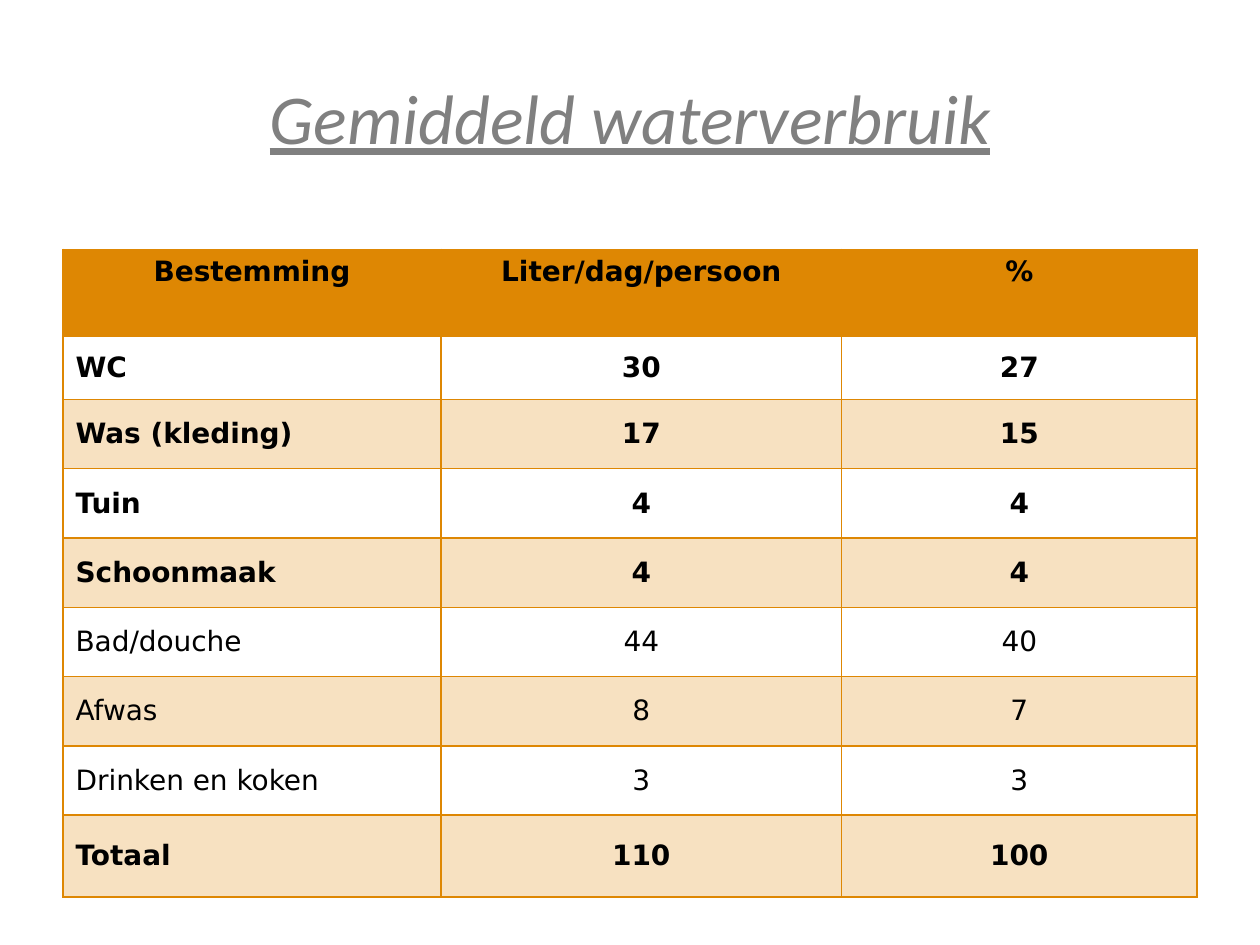
from dataclasses import dataclass

from lxml import etree
from pptx import Presentation
from pptx import util as u
from pptx.dml.color import RGBColor
from pptx.enum import text
from pptx.oxml import ns

TITLE = "Gemiddeld waterverbruik"
HEADER = ("Bestemming", "Liter/dag/persoon", "%")
# Label, litres per person per day, percentage, bold
USES = [
    ("WC", 30, 27, True),
    ("Was (kleding)", 17, 15, True),
    ("Tuin", 4, 4, True),
    ("Schoonmaak", 4, 4, True),
    ("Bad/douche", 44, 40, False),
    ("Afwas", 8, 7, False),
    ("Drinken en koken", 3, 3, False),
    ("Totaal", 110, 100, True),
]

SLIDE_WIDTH, SLIDE_HEIGHT = 10, 7.5
MARGIN = 0.05 * SLIDE_WIDTH
CONTENT_WIDTH = SLIDE_WIDTH - 2 * MARGIN
TITLE_TOP, TITLE_HEIGHT = 0.04 * SLIDE_HEIGHT, 1.25
TABLE_TOP = 1.98
COLUMN_WIDTHS = (3, 3.18, 2.82)
HEADER_HEIGHT, FIRST_HEIGHT, ROW_HEIGHT, TOTAL_HEIGHT = 0.69, 0.5, 0.55, 0.65


@dataclass(frozen=True)
class Theme:
    title_font: str = "Calibri"
    table_font: str = "DejaVu Sans"
    title_size: int = 40
    table_size: int = 16
    title: str = "808080"
    ink: str = "000000"
    accent: str = "DE8703"
    band: str = "F7E1C1"
    border_width: int = 1


THEME = Theme()


def style_font(font, name, size, color):
    font.name = name
    font.size = u.Pt(size)
    font.color.rgb = RGBColor.from_string(color)


def add_borders(cell):
    properties = cell._tc.get_or_add_tcPr()
    for side in ("lnL", "lnR", "lnT", "lnB"):
        line = etree.SubElement(properties, ns.qn(f"a:{side}"), w=str(u.Pt(THEME.border_width)))
        fill = etree.SubElement(line, ns.qn("a:solidFill"))
        etree.SubElement(fill, ns.qn("a:srgbClr"), val=THEME.accent)


def fill_cell(cell, value, bold, centred, anchor, color):
    """Write and format one cell; borders must come before the fill in the XML."""
    add_borders(cell)
    if color:
        cell.fill.solid()
        cell.fill.fore_color.rgb = RGBColor.from_string(color)
    else:
        cell.fill.background()
    cell.vertical_anchor = anchor
    cell.text_frame.text = str(value)
    paragraph = cell.text_frame.paragraphs[0]
    paragraph.alignment = text.PP_ALIGN.CENTER if centred else text.PP_ALIGN.LEFT
    font = paragraph.runs[0].font
    style_font(font, THEME.table_font, THEME.table_size, THEME.ink)
    font.bold = bold


def add_title(slide):
    title = slide.shapes.title
    title.left, title.top = u.Inches(MARGIN), u.Inches(TITLE_TOP)
    title.width, title.height = u.Inches(CONTENT_WIDTH), u.Inches(TITLE_HEIGHT)
    title.text_frame.text = TITLE
    title.text_frame.vertical_anchor = text.MSO_ANCHOR.MIDDLE
    paragraph = title.text_frame.paragraphs[0]
    paragraph.alignment = text.PP_ALIGN.CENTER
    font = paragraph.runs[0].font
    style_font(font, THEME.title_font, THEME.title_size, THEME.title)
    font.italic = font.underline = True


def add_usage_table(slide):
    heights = [HEADER_HEIGHT, FIRST_HEIGHT, *[ROW_HEIGHT] * (len(USES) - 2), TOTAL_HEIGHT]
    table = slide.shapes.add_table(
        len(heights), len(HEADER), u.Inches(MARGIN), u.Inches(TABLE_TOP),
        u.Inches(CONTENT_WIDTH), u.Inches(sum(heights))).table
    table.first_row = True
    table.horz_banding = False
    for column, width in zip(table.columns, COLUMN_WIDTHS):
        column.width = u.Inches(width)
    for row, height in zip(table.rows, heights):
        row.height = u.Inches(height)

    for column, label in enumerate(HEADER):
        fill_cell(table.cell(0, column), label, True, True, text.MSO_ANCHOR.TOP, THEME.accent)
    for row, (*values, bold) in enumerate(USES, start=1):
        color = THEME.band if row % 2 == 0 else None
        for column, value in enumerate(values):
            fill_cell(table.cell(row, column), value, bold, column > 0,
                      text.MSO_ANCHOR.MIDDLE, color)


def main():
    presentation = Presentation()
    presentation.slide_width = u.Inches(SLIDE_WIDTH)
    presentation.slide_height = u.Inches(SLIDE_HEIGHT)
    slide = presentation.slides.add_slide(presentation.slide_layouts[5])
    add_title(slide)
    add_usage_table(slide)
    presentation.save("out.pptx")


if __name__ == "__main__":
    main()
